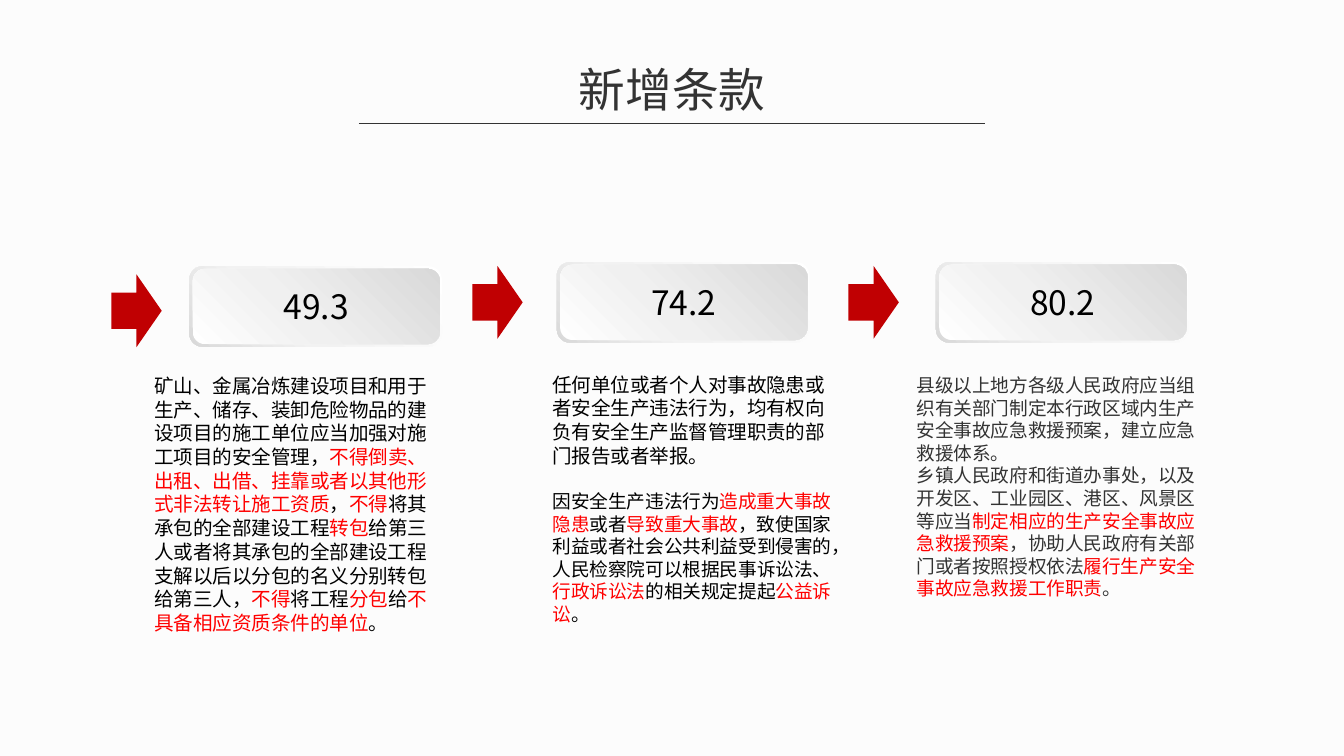
from copy import deepcopy

from lxml.etree import SubElement
from pptx import Presentation
from pptx.dml.color import RGBColor
from pptx.enum.shapes import MSO_CONNECTOR, MSO_SHAPE
from pptx.enum.text import MSO_ANCHOR, PP_ALIGN
from pptx.oxml.ns import qn
from pptx.util import Pt

FONT = "Noto Sans CJK SC"
BLACK, GREY, RED = "000000", "333333", "FF0000"

# Odd pieces between bars are highlighted; each paragraph carries its own size.
COLUMNS = [
    dict(number="49.3", arrow=(59.6, 147), card=(101.4, 142.6), text=(82.8, 200.2),
         font=FONT, color=BLACK, paragraphs=[
             (10.5, "矿山、金属冶炼建设项目和用于生产、储存、装卸危险物品的建设项目的施工单位应当加强对"
                    "施工项目的安全管理，|不得倒卖、出租、出借、挂靠或者以其他形式非法转让施工资质|，|不得|"
                    "将其承包的全部建设工程|转包|给第三人或者将其承包的全部建设工程支解以后以分包的名义"
                    "分别转包给第三人，|不得|将工程|分包|给|不具备相应资质条件的单位|。")]),
    dict(number="74.2", arrow=(253, 142.5), card=(298.3, 140.4), text=(296, 199.6),
         font=FONT, color=BLACK, gap=12, paragraphs=[
             (10.5, "任何单位或者个人对事故隐患或者安全生产违法行为，均有权向负有安全生产监督管理职责的"
                    "部门报告或者举报。"),
             (10, "因安全生产违法行为|造成重大事故隐患|或者|导致重大事故|，致使国家利益或者社会公共利益"
                  "受到侵害的，人民检察院可以根据民事诉讼法、|行政诉讼法|的相关规定提起|公益诉讼|。")]),
    dict(number="80.2", arrow=(454.5, 142.5), card=(501.4, 140.4), text=(491, 200.2),
         font="Arial", color=GREY, paragraphs=[
             (10, "县级以上地方各级人民政府应当组织有关部门制定本行政区域内生产安全事故应急救援预案，"
                  "建立应急救援体系。"),
             (10, "乡镇人民政府和街道办事处，以及开发区、工业园区、港区、风景区等应当|"
                  "制定相应的生产安全事故应急救援预案|，协助人民政府有关部门或者按照授权依法|"
                  "履行生产安全事故应急救援工作职责|。")]),
]


def rgb(color):
    """Turn a hex string into a colour."""
    return RGBColor.from_string(color)


def format_run(r, size, color, font=FONT):
    """Set size, colour and both the Latin and East Asian font of a run."""
    r.font.size = Pt(size)
    r.font.color.rgb = rgb(color)
    r.font.name = font
    SubElement(r.font._element, qn("a:ea"), typeface=FONT)


def add_title(s, text):
    """Fill the title placeholder and draw the rule under it."""
    sp = s.shapes.title
    sp.left, sp.top, sp.width, sp.height = Pt(226.8), Pt(28.8), Pt(266.4), Pt(37.4)
    tf = sp.text_frame
    tf.text = text
    tf.vertical_anchor = MSO_ANCHOR.MIDDLE
    p = tf.paragraphs[0]
    p.alignment = PP_ALIGN.CENTER
    format_run(p.runs[0], 25, GREY)
    line = s.shapes.add_connector(MSO_CONNECTOR.STRAIGHT, Pt(192.2), Pt(66.2), Pt(527.8), Pt(66.2))
    line.line.color.rgb = rgb(GREY)
    line.line.width = Pt(0.75)
    SubElement(line._element.spPr, qn("a:effectLst"))


def add_arrow(s, x, y):
    """Add a red block arrow."""
    sp = s.shapes.add_shape(MSO_SHAPE.RIGHT_ARROW, Pt(x), Pt(y), Pt(27), Pt(39))
    sp.shadow.inherit = False
    sp.fill.solid()
    sp.fill.fore_color.rgb = rgb("C00002")
    sp.line.fill.background()


def add_panel(group, x, y, w, h, angle, stops):
    """Add a rounded rectangle with a three-stop gradient."""
    sp = group.shapes.add_shape(MSO_SHAPE.ROUNDED_RECTANGLE, Pt(x), Pt(y), Pt(w), Pt(h))
    sp.shadow.inherit = False
    sp.line.fill.background()
    sp.fill.gradient()
    sp.fill.gradient_angle = angle
    stop_list = sp._element.spPr.find(".//" + qn("a:gsLst"))
    stop_list.append(deepcopy(stop_list[0]))
    for stop, (position, color) in zip(sp.fill.gradient_stops, stops):
        stop.position = position
        stop.color.rgb = rgb(color)
    return sp


def add_card(s, x, y, number):
    """Add a bevelled card, a rim and a face, showing an article number."""
    group = s.shapes.add_group_shape()
    add_panel(group, x, y, 135.4, 43.2, 225, [(0, "FFFFFF"), (0.62, "F2F2F2"), (1, "D9D9D9")])
    face = add_panel(group, x + 1.8, y + 1.4, 132.5, 40.4, 45,
                     [(0, "FFFFFF"), (0.42, "F0F0F0"), (1, "D9D9D9")])
    tf = face.text_frame
    tf.text = number
    tf.vertical_anchor = MSO_ANCHOR.MIDDLE
    p = tf.paragraphs[0]
    p.alignment = PP_ALIGN.CENTER
    format_run(p.runs[0], 18, BLACK)


def add_clause(s, x, y, paragraphs, font, color, gap):
    """Add a text column whose marked pieces are red."""
    tf = s.shapes.add_textbox(Pt(x), Pt(y), Pt(153.4), Pt(136)).text_frame
    tf.word_wrap = True
    tf.margin_left = tf.margin_right = tf.margin_top = tf.margin_bottom = 0
    for i, (size, text) in enumerate(paragraphs):
        p = tf.add_paragraph() if i else tf.paragraphs[0]
        p.line_spacing = Pt(round(size * 1.21, 1))
        if i:
            p.space_before = Pt(gap)
        for j, piece in enumerate(text.split("|")):
            r = p.add_run()
            r.text = piece
            format_run(r, size, RED if j % 2 else color, font)


def main():
    """Build the slide and save it."""
    prs = Presentation()
    prs.slide_width, prs.slide_height = Pt(720), Pt(405)
    s = prs.slides.add_slide(prs.slide_layouts[5])
    s.background.fill.solid()
    s.background.fill.fore_color.rgb = rgb("FCFCFC")
    add_title(s, "新增条款")
    for column in COLUMNS:
        add_arrow(s, *column["arrow"])
        add_card(s, *column["card"], column["number"])
        add_clause(s, *column["text"], column["paragraphs"], column["font"],
                   column["color"], column.get("gap", 0))
    prs.save("out.pptx")


if __name__ == "__main__":
    main()
